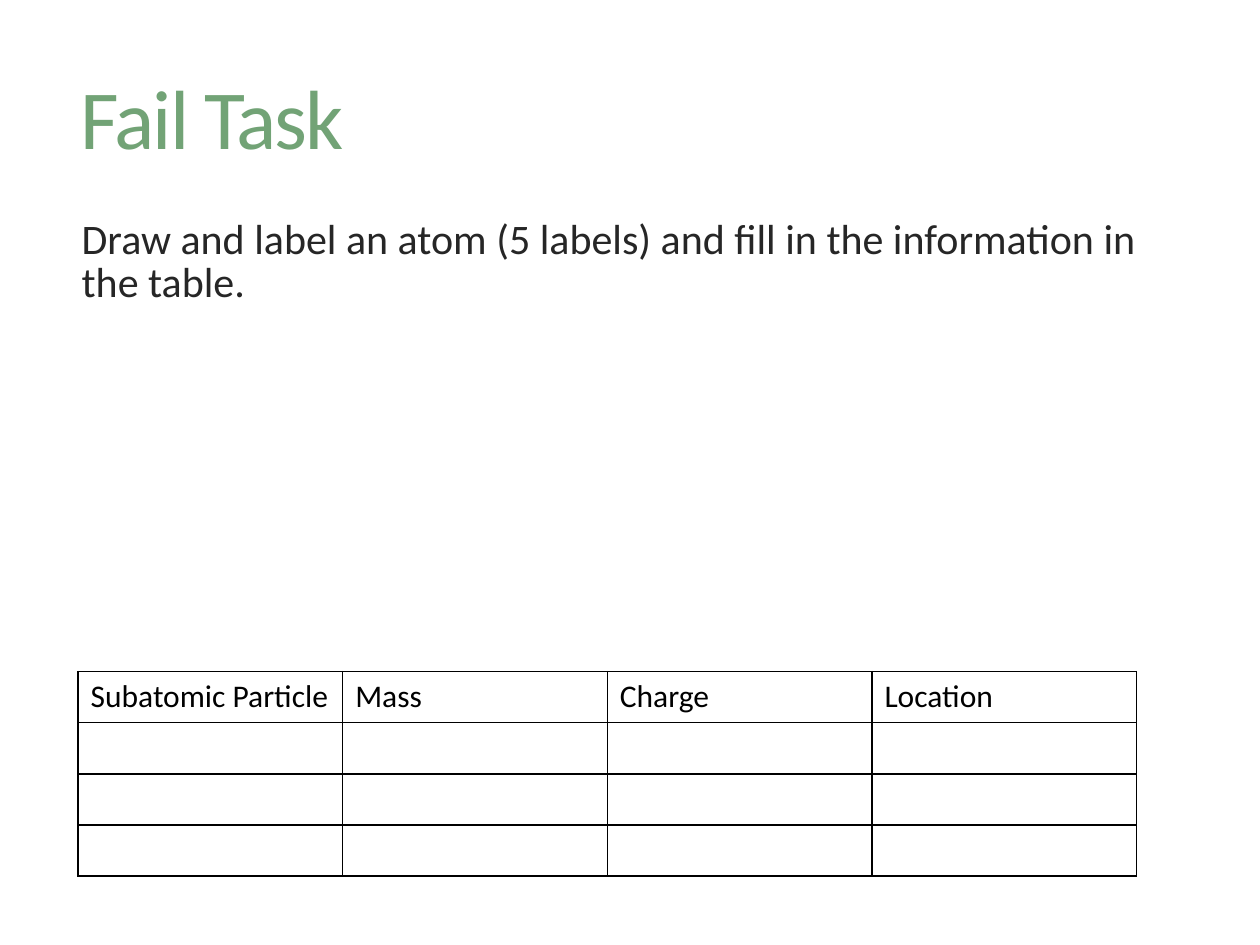
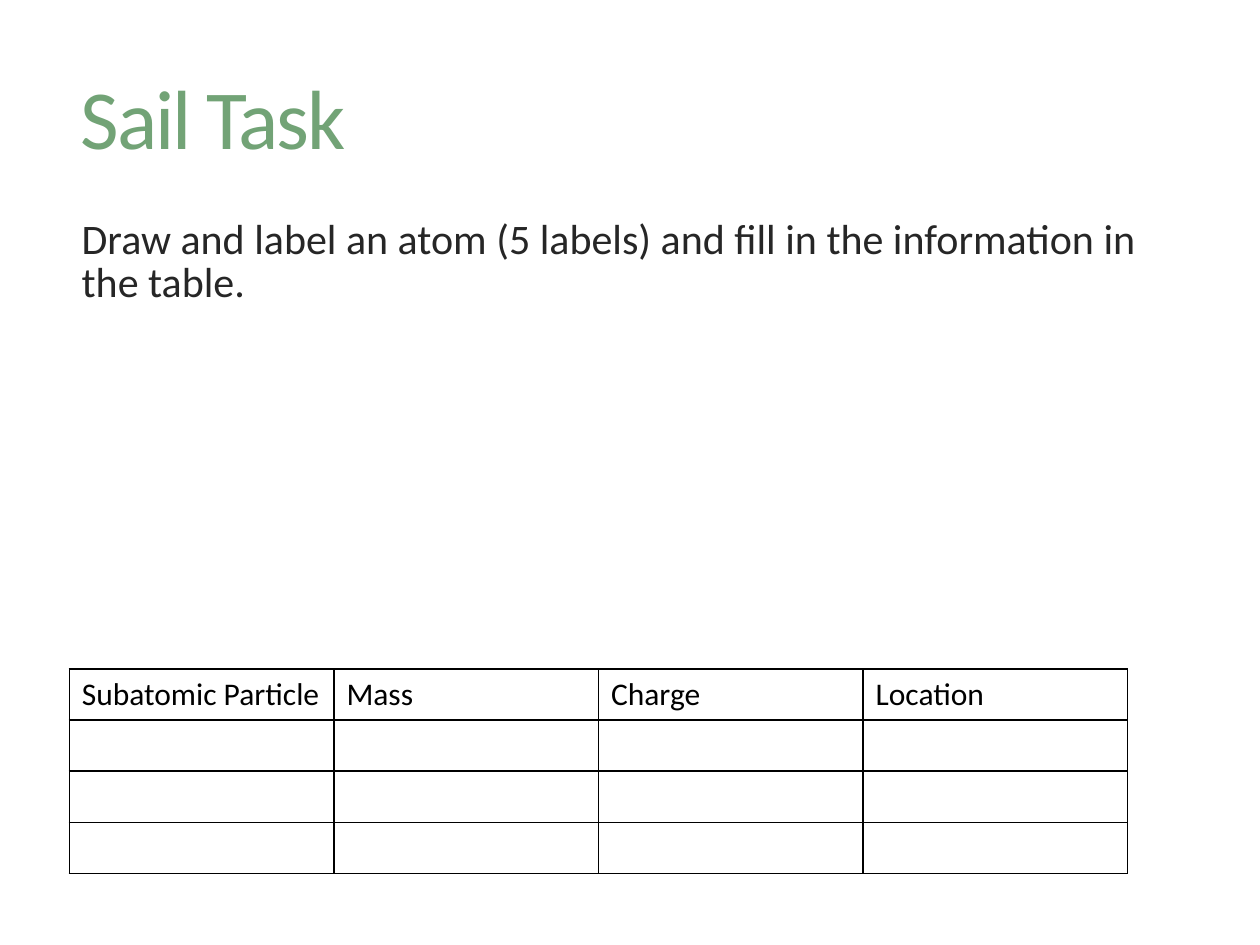
"""Build two worksheet slides, each with a task and an empty particle table."""
from lxml import etree
from pptx import Presentation, util as u
from pptx.dml import color
from pptx.enum import text
from pptx.oxml import ns

PX = u.Inches(1) // 200
HEADERS = ["Subatomic Particle", "Mass", "Charge", "Location"]
TASK = "Draw and label an atom (5 labels) and fill in the information in the table."
SLIDES = [("Fail Task", (124, 1066)), ("Sail Task", (110, 1062))]


def rgb(value):
    return color.RGBColor.from_string(value)


def assign(target, values):
    for name, value in values.items():
        setattr(target, name, value)


class Deck:
    FONT = "Calibri"
    GREEN, GREY, BLACK = "72A376", "262626", "000000"

    def __init__(self, width, height):
        self.prs = Presentation()
        assign(self.prs, {"slide_width": width * PX, "slide_height": height * PX})

    def add_slide(self):
        self.s = self.prs.slides.add_slide(self.prs.slide_layouts[5])
        self.s.background.fill.solid()
        self.s.background.fill.fore_color.rgb = rgb("FFFFFF")

    def add_words(self, tf, words, size, fill, **paragraph):
        p = tf.paragraphs[0]
        assign(p, {"alignment": text.PP_ALIGN.LEFT, **paragraph})
        assign(p.font, {"size": u.Pt(size), "name": self.FONT})
        if not words:
            return None
        r = p.add_run()
        r.text = words
        assign(r.font, {"size": u.Pt(size), "name": self.FONT, "bold": False})
        r.font.color.rgb = rgb(fill)
        return r

    def place(self, sp, x, y, w, h, anchor):
        assign(sp, {"left": x * PX, "top": y * PX, "width": w * PX, "height": h * PX})
        assign(sp.text_frame, {"word_wrap": True, "vertical_anchor": anchor,
                               "auto_size": text.MSO_AUTO_SIZE.NONE})
        return sp.text_frame

    def title(self, words):
        tf = self.place(self.s.shapes.title, 108, 110, 1768, 168, text.MSO_ANCHOR.MIDDLE)
        r = self.add_words(tf, words, 48, self.GREEN, line_spacing=0.9)
        r.font._element.set("spc", "-120")

    def body(self, words):
        sp = self.s.shapes.add_textbox(0, 0, PX, PX)
        tf = self.place(sp, 110, 340, 1764, 920, text.MSO_ANCHOR.TOP)
        self.add_words(tf, words, 24, self.GREY, line_spacing=0.85, space_before=u.Pt(13))

    def border(self, cell):
        props = cell._tc.get_or_add_tcPr()
        for i, side in enumerate(("lnL", "lnR", "lnT", "lnB")):
            line = etree.Element(ns.qn(f"a:{side}"), w=str(u.Pt(1)))
            fill = etree.SubElement(line, ns.qn("a:solidFill"))
            etree.SubElement(fill, ns.qn("a:srgbClr"), val=self.BLACK)
            props.insert(i, line)

    def table(self, x, y, headers, blank_rows, col_w=420, row_h=81):
        rows = [headers] + [[""] * len(headers)] * blank_rows
        table = self.s.shapes.add_table(
            len(rows), len(headers), x * PX, y * PX,
            len(headers) * col_w * PX, len(rows) * row_h * PX).table
        assign(table, {"first_row": False, "horz_banding": False})
        for i, row in enumerate(rows):
            for j, words in enumerate(row):
                cell = table.cell(i, j)
                cell.fill.background()
                self.border(cell)
                self.add_words(cell.text_frame, words, 18, self.BLACK)


def main():
    deck = Deck(2000, 1500)
    for heading, corner in SLIDES:
        deck.add_slide()
        deck.title(heading)
        deck.body(TASK)
        deck.table(*corner, HEADERS, blank_rows=3)
    deck.prs.save("out.pptx")


if __name__ == "__main__":
    main()
